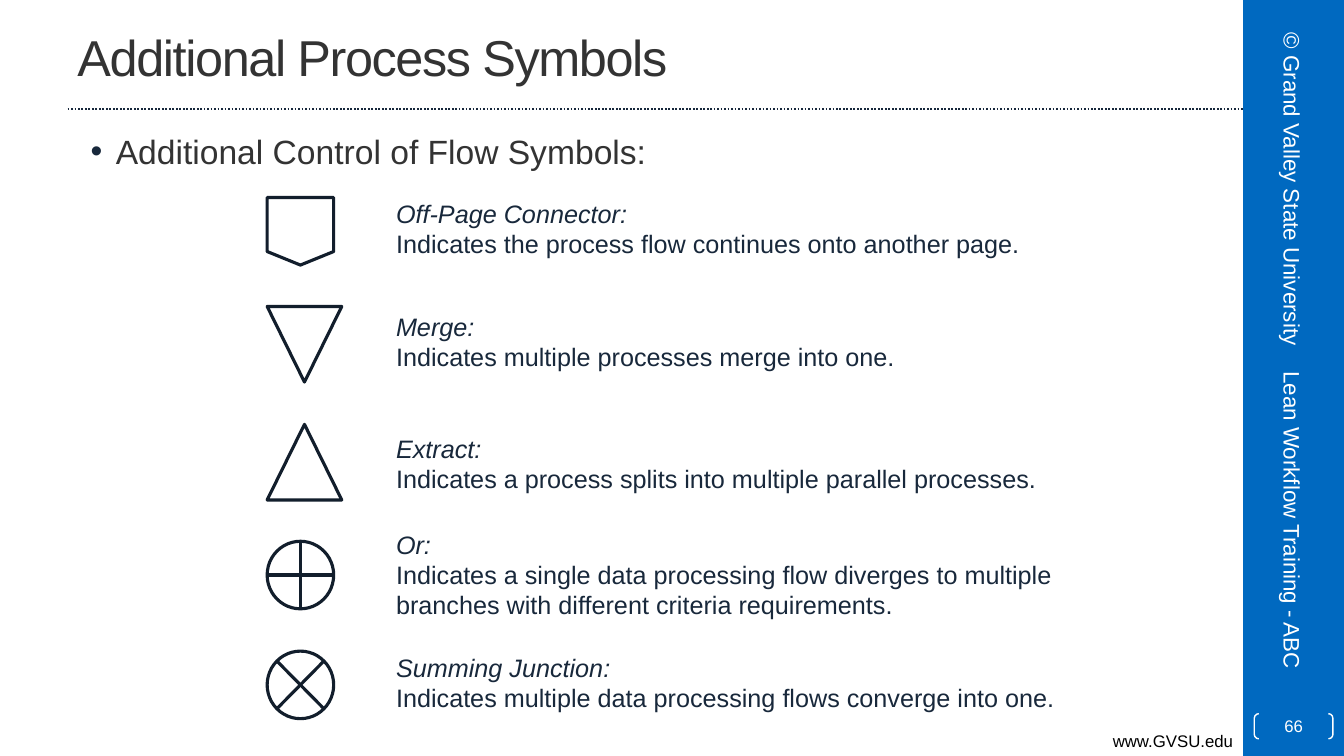
from lxml.etree import SubElement
from pptx import Presentation
from pptx.dml.color import RGBColor
from pptx.enum.dml import MSO_LINE
from pptx.enum.shapes import MSO_CONNECTOR, MSO_SHAPE
from pptx.enum.text import MSO_ANCHOR, PP_ALIGN
from pptx.oxml.ns import qn
from pptx.util import Inches, Pt

FONT = "Arial"
BLUE = RGBColor(0x00, 0x69, 0xC0)
WHITE = RGBColor(0xFF, 0xFF, 0xFF)
BLACK = RGBColor(0x00, 0x00, 0x00)
GREY = RGBColor(0x33, 0x33, 0x33)
NAVY = RGBColor(0x18, 0x28, 0x3B)
RULE = RGBColor(0x17, 0x27, 0x3B)
OUTLINE = RGBColor(0x12, 0x1E, 0x2C)

SYMBOL_LEFT = 2.65
SMALL = (0.66, 0.67)
LARGE = (0.74, 0.75)
SYMBOLS = [
    (MSO_SHAPE.FLOWCHART_OFFPAGE_CONNECTOR, 1.96, SMALL, 1.92, 0.71, "Off-Page Connector:",
     "Indicates the process flow continues onto another page."),
    (MSO_SHAPE.FLOWCHART_MERGE, 3.04, LARGE, 3.04, 0.71, "Merge:",
     "Indicates multiple processes merge into one."),
    (MSO_SHAPE.FLOWCHART_EXTRACT, 4.21, LARGE, 4.25, 0.71, "Extract:",
     "Indicates a process splits into multiple parallel processes."),
    (MSO_SHAPE.FLOWCHART_OR, 5.37, SMALL, 5.2, 1.01, "Or:",
     "Indicates a single data processing flow diverges to multiple branches "
     "with different criteria requirements."),
    (MSO_SHAPE.FLOWCHART_SUMMING_JUNCTION, 6.46, SMALL, 6.42, 0.71, "Summing Junction:",
     "Indicates multiple data processing flows converge into one."),
]


def add_run(paragraph, text, size, color, italic=False):
    run = paragraph.add_run()
    run.text = text
    run.font.name = FONT
    run.font.size = Pt(size)
    run.font.color.rgb = color
    run.font.italic = italic
    return run


def add_text_box(slide, left, top, width, height, anchor=MSO_ANCHOR.TOP):
    box = slide.shapes.add_textbox(Inches(left), Inches(top), Inches(width), Inches(height))
    box.text_frame.word_wrap = True
    box.text_frame.vertical_anchor = anchor
    return box


def add_shape(slide, kind, left, top, width, height, fill=None, line=None, weight=1):
    shape = slide.shapes.add_shape(
        kind, Inches(left), Inches(top), Inches(width), Inches(height))
    shape.shadow.inherit = False
    if fill is None:
        shape.fill.background()
    else:
        shape.fill.solid()
        shape.fill.fore_color.rgb = fill
    if line is None:
        shape.line.fill.background()
    else:
        shape.line.color.rgb = line
        shape.line.width = Pt(weight)
    return shape


def add_title(slide, text):
    box = add_text_box(slide, 0.67, 0.03, 11.11, 1.05, MSO_ANCHOR.MIDDLE)
    run = add_run(box.text_frame.paragraphs[0], text, 36, GREY)
    run._r.get_or_add_rPr().set("spc", "-100")


def add_rule(slide):
    rule = slide.shapes.add_connector(
        MSO_CONNECTOR.STRAIGHT, Inches(0.67), Inches(1.08), Inches(12.33), Inches(1.08))
    rule.line.color.rgb = RULE
    rule.line.width = Pt(1.25)
    rule.line.dash_style = MSO_LINE.ROUND_DOT
    SubElement(rule._element.spPr, qn("a:effectLst"))


def add_bullet(slide, text):
    box = add_text_box(slide, 0.67, 1.25, 11.11, 0.5)
    paragraph = box.text_frame.paragraphs[0]
    properties = paragraph._p.get_or_add_pPr()
    properties.set("marL", str(Inches(0.38)))
    properties.set("indent", str(Inches(-0.25)))
    bullet_color = SubElement(properties, qn("a:buClr"))
    SubElement(bullet_color, qn("a:srgbClr")).set("val", str(NAVY))
    SubElement(properties, qn("a:buFont")).set("typeface", FONT)
    SubElement(properties, qn("a:buChar")).set("char", "•")
    add_run(paragraph, text, 24, GREY)


def add_symbol(slide, kind, top, size, text_top, text_height, name, meaning):
    add_shape(slide, kind, SYMBOL_LEFT, top, *size, line=OUTLINE, weight=2.25)
    frame = add_text_box(slide, 3.83, text_top, 7, text_height).text_frame
    add_run(frame.paragraphs[0], name, 18, NAVY, italic=True)
    add_run(frame.add_paragraph(), meaning, 18, NAVY)


def add_side_text(slide, top, text, alignment):
    box = add_text_box(slide, 11.11, top, 3.42, 0.53, MSO_ANCHOR.MIDDLE)
    box.rotation = 90
    paragraph = box.text_frame.paragraphs[0]
    paragraph.alignment = alignment
    add_run(paragraph, text, 16, WHITE)


def add_website(slide, text):
    box = add_text_box(slide, 0, 7.2, 12.33, 0.3)
    paragraph = box.text_frame.paragraphs[0]
    paragraph.alignment = PP_ALIGN.RIGHT
    add_run(paragraph, text, 12, BLACK)


def add_page_number(slide, number):
    bracket = add_shape(slide, MSO_SHAPE.DOUBLE_BRACKET, 12.44, 7.08, 0.78, 0.25, line=WHITE)
    bracket.adjustments[0] = 0.18
    frame = bracket.text_frame
    frame.margin_left = frame.margin_right = frame.margin_top = frame.margin_bottom = 0
    frame.vertical_anchor = MSO_ANCHOR.MIDDLE
    paragraph = frame.paragraphs[0]
    paragraph.alignment = PP_ALIGN.CENTER
    add_run(paragraph, number, 12, WHITE)


def main():
    presentation = Presentation()
    presentation.slide_width = Inches(13.33)
    presentation.slide_height = Inches(7.5)
    slide = presentation.slides.add_slide(presentation.slide_layouts[6])
    add_shape(slide, MSO_SHAPE.RECTANGLE, 12.33, 0, 1, 7.5, fill=BLUE)
    add_rule(slide)
    add_website(slide, "www.GVSU.edu")
    add_title(slide, "Additional Process Symbols")
    add_bullet(slide, "Additional Control of Flow Symbols:")
    for symbol in SYMBOLS:
        add_symbol(slide, *symbol)
    add_side_text(slide, 5.03, "Lean Workflow Training - ABC", PP_ALIGN.LEFT)
    add_side_text(slide, 1.61, "© Grand Valley State University", PP_ALIGN.CENTER)
    add_page_number(slide, "66")
    presentation.save("out.pptx")


if __name__ == "__main__":
    main()
